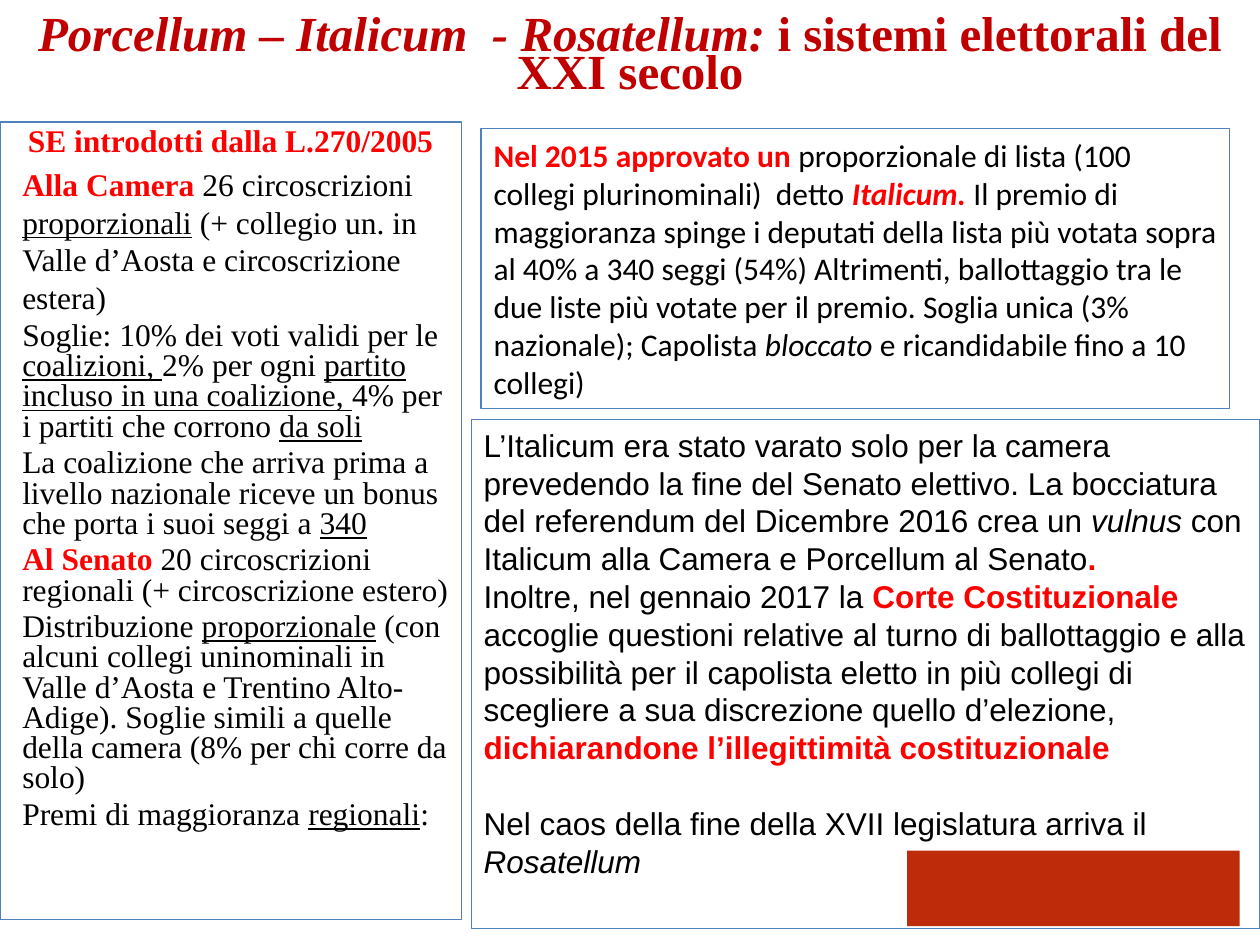
from pptx import Presentation
from pptx.dml.color import RGBColor
from pptx.enum import shapes, text
from pptx.util import Cm, Pt

DARK_RED = RGBColor(0xC0, 0x00, 0x00)
RED = RGBColor(0xFF, 0x00, 0x00)
BLACK = RGBColor(0x00, 0x00, 0x00)
BLUE = RGBColor(0x4F, 0x81, 0xBD)
BRICK = RGBColor(0xBD, 0x2B, 0x0B)
SERIF = "Times New Roman"

# Each span is (wording, marks): h = red bold, i = italic, u = underlined
TITLE = [("Porcellum – Italicum  - Rosatellum: ", "i"),
         ("i sistemi elettorali del XXI secolo", "")]
HEADING = [("SE introdotti dalla L.270/2005", "h")]
CHAMBER = [("Alla Camera ", "h"), ("26 circoscrizioni ", ""), ("proporzionali", "u"),
           (" (+ collegio un. in Valle d’Aosta e circoscrizione estera)", "")]
RULES = [
    [("Soglie: 10% dei voti validi per le ", ""), ("coalizioni, ", "u"),
     ("2% per ogni ", ""), ("partito incluso in una coalizione, ", "u"),
     ("4% per i partiti che corrono ", ""), ("da soli", "u")],
    [("La coalizione che arriva prima a livello nazionale riceve un bonus "
      "che porta i suoi seggi a ", ""), ("340", "u")],
    [("Al Senato ", "h"), ("20 circoscrizioni regionali (+ circoscrizione estero)", "")],
    [("Distribuzione ", ""), ("proporzionale", "u"),
     (" (con alcuni collegi uninominali in Valle d’Aosta e Trentino Alto-Adige). "
      "Soglie simili a quelle della camera (8% per chi corre da solo)", "")],
    [("Premi di maggioranza ", ""), ("regionali", "u"), (":", "")],
]
ITALICUM = [
    ("Nel 2015 approvato un ", "h"),
    ("proporzionale di lista (100 collegi plurinominali)  detto ", ""),
    ("Italicum. ", "hi"),
    ("Il premio di maggioranza spinge i deputati della lista più votata sopra al 40% "
     "a 340 seggi (54%) Altrimenti, ballottaggio tra le due liste più votate per il "
     "premio. Soglia unica (3% nazionale); Capolista ", ""),
    ("bloccato", "i"), (" e ricandidabile fino a 10 collegi)", "")]
REFERENDUM = [
    ("L’Italicum era stato varato solo per la camera prevedendo la fine del Senato "
     "elettivo. La bocciatura del referendum del Dicembre 2016 crea un ", ""),
    ("vulnus ", "i"), ("con Italicum alla Camera e Porcellum al Senato", ""), (".", "h")]
COURT = [
    ("Inoltre, nel gennaio 2017 la ", ""), ("Corte Costituzionale ", "h"),
    ("accoglie questioni relative al turno di ballottaggio e alla possibilità per il "
     "capolista eletto in più collegi di scegliere a sua discrezione quello "
     "d’elezione, ", ""),
    ("dichiarandone l’illegittimità costituzionale", "h")]
ROSATELLUM = [("Nel caos della fine della XVII legislatura arriva il ", ""),
              ("Rosatellum", "i")]


def add_box(page, left, top, width, height, fill=None, line=None):
    box = page.shapes.add_shape(shapes.MSO_SHAPE.RECTANGLE,
                                Cm(left), Cm(top), Cm(width), Cm(height))
    box.shadow.inherit = False
    if fill is None:
        box.fill.background()
    else:
        box.fill.solid()
        box.fill.fore_color.rgb = fill
    if line is None:
        box.line.fill.background()
    else:
        box.line.color.rgb = line
        box.line.width = Pt(0.75)
    box.text_frame.word_wrap = True
    box.text_frame.vertical_anchor = text.MSO_ANCHOR.TOP
    return box


def write(box, spans, font, size=18, color=BLACK, bold=False, before=0,
          spacing=None, centred=False, margin=0):
    """Fill the first paragraph of the box, or append one if it is in use."""
    frame = box.text_frame
    para = frame.paragraphs[0]
    if para.runs:
        para = frame.add_paragraph()
    if margin:
        para._p.get_or_add_pPr().set("marL", str(Cm(margin)))
    para.alignment = text.PP_ALIGN.CENTER if centred else text.PP_ALIGN.LEFT
    para.space_before = Pt(before)
    para.line_spacing = spacing
    para.font.name, para.font.size = font, Pt(size)
    for wording, marks in spans:
        span = para.add_run()
        span.text = wording
        span.font.name, span.font.size = font, Pt(size)
        span.font.color.rgb = RED if "h" in marks else color
        span.font.bold = bold or "h" in marks
        span.font.italic = "i" in marks
        span.font.underline = "u" in marks


def add_title(page):
    box = page.shapes.add_textbox(Cm(0), Cm(0.33), Cm(25.4), Cm(2))
    box.text_frame.word_wrap = True
    write(box, TITLE, SERIF, 28, DARK_RED, bold=True, spacing=Pt(22), centred=True)


def add_porcellum(page):
    box = add_box(page, 0, 2.46, 9.3, 16.08, line=BLUE)
    write(box, HEADING, SERIF, spacing=0.8, centred=True)
    write(box, CHAMBER, SERIF, before=3.6, margin=0.2)
    for rule in RULES:
        write(box, rule, SERIF, before=3.6, spacing=0.8, margin=0.2)


def add_italicum(page):
    box = add_box(page, 9.7, 2.59, 15.09, 5.64, line=BLUE)
    box.text_frame.vertical_anchor = text.MSO_ANCHOR.MIDDLE
    write(box, ITALICUM, "Calibri")


def add_aftermath(page):
    box = add_box(page, 9.5, 8.46, 15.9, 10.26, line=BLUE)
    write(box, REFERENDUM, "Arial")
    write(box, COURT, "Arial")
    write(box, ROSATELLUM, "Arial", before=21.6)


def main():
    deck = Presentation()
    deck.slide_width, deck.slide_height = Cm(25.4), Cm(19.05)
    page = deck.slides.add_slide(deck.slide_layouts[6])
    add_box(page, 18.29, 17.15, 6.7, 1.52, fill=BRICK)
    add_title(page)
    add_porcellum(page)
    add_italicum(page)
    add_aftermath(page)
    deck.save("out.pptx")


if __name__ == "__main__":
    main()
